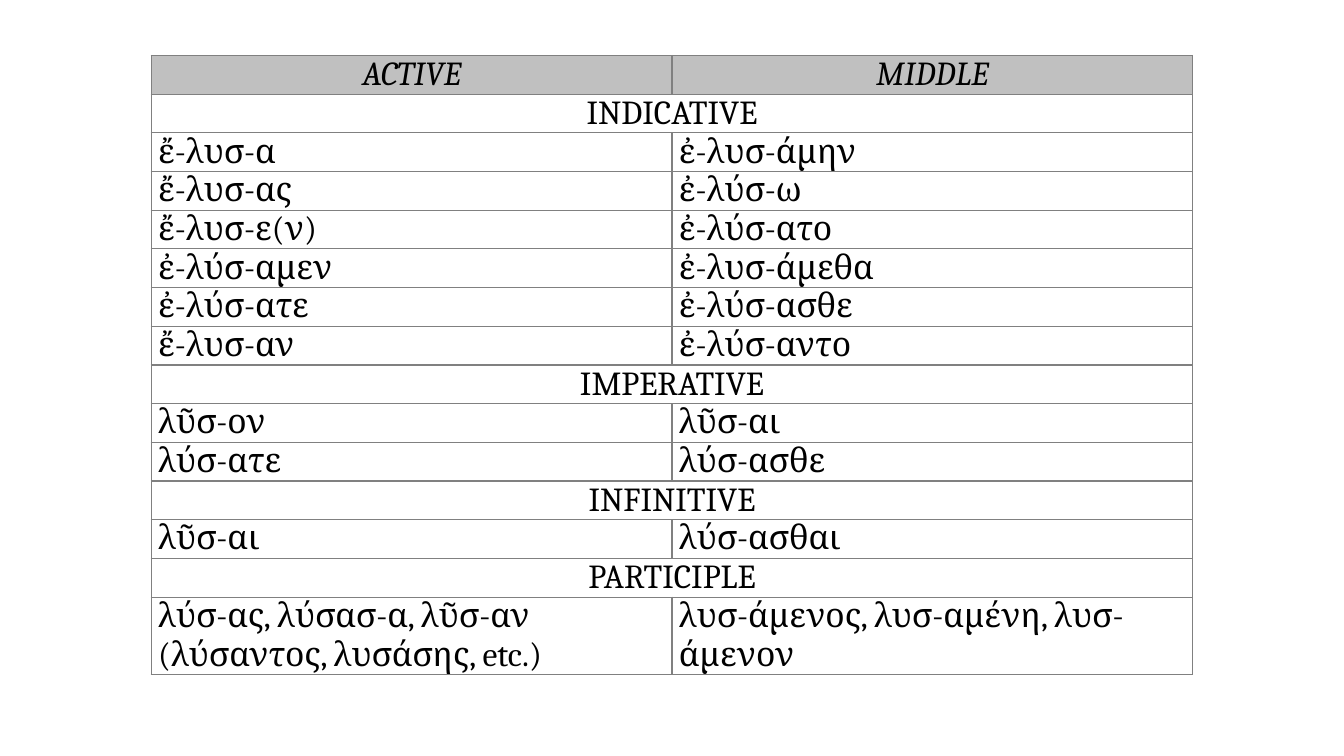
import dataclasses

import pptx
import pptx.dml.color
import pptx.enum.text
import pptx.oxml
import pptx.oxml.ns
import pptx.util

Pt = pptx.util.Pt
RGB = pptx.dml.color.RGBColor


@dataclasses.dataclass(frozen=True)
class Theme:
    """Colours, typeface and sizes of the slide."""
    font: str = "Cambria"
    size: float = 24
    ink: str = "000000"
    header: str = "C0C0C0"
    body: str = "FFFFFF"
    border: str = "808080"
    border_width: float = 1


THEME = Theme()
LEFT, TOP, COLUMN_WIDTH, LINE_HEIGHT = 108, 39.6, 372, 27.6
VOICES = ("ACTIVE", "MIDDLE")
MOODS = {
    "INDICATIVE": [
        ("ἔ-λυσ-α", "ἐ-λυσ-άμην"),
        ("ἔ-λυσ-ας", "ἐ-λύσ-ω"),
        ("ἔ-λυσ-ε(ν)", "ἐ-λύσ-ατο"),
        ("ἐ-λύσ-αμεν", "ἐ-λυσ-άμεθα"),
        ("ἐ-λύσ-ατε", "ἐ-λύσ-ασθε"),
        ("ἔ-λυσ-αν", "ἐ-λύσ-αντο"),
    ],
    "IMPERATIVE": [("λῦσ-ον", "λῦσ-αι"), ("λύσ-ατε", "λύσ-ασθε")],
    "INFINITIVE": [("λῦσ-αι", "λύσ-ασθαι")],
    "PARTICIPLE": [
        ("λύσ-ας, λύσασ-α, λῦσ-αν\v(λύσαντος, λυσάσης, etc.)",
         "λυσ-άμενος, λυσ-αμένη, λυσ-άμενον"),
    ],
}


def apply(target, formats):
    """Set each attribute of target from a dict."""
    for name, value in formats.items():
        setattr(target, name, value)


def add_borders(cell):
    """Draw a thin line on all four sides of a cell."""
    properties = cell._tc.get_or_add_tcPr()
    for side in ("lnL", "lnR", "lnT", "lnB"):
        properties.append(pptx.oxml.parse_xml(
            f'<a:{side} {pptx.oxml.ns.nsdecls("a")} w="{Pt(THEME.border_width)}">'
            f'<a:solidFill><a:srgbClr val="{THEME.border}"/></a:solidFill></a:{side}>'))


def style_cell(cell, fill):
    """Give a cell its borders, margins and fill."""
    add_borders(cell)
    apply(cell, {"margin_left": Pt(5), "margin_right": Pt(5),
                 "margin_top": 0, "margin_bottom": 0})
    cell.fill.solid()
    cell.fill.fore_color.rgb = RGB.from_string(fill)


def write_cell(cell, text, centred=False, italic=False):
    """Write formatted text into a cell."""
    para = cell.text_frame.paragraphs[0]
    para.text = text
    if centred:
        para.alignment = pptx.enum.text.PP_ALIGN.CENTER
    for span in para.runs:
        apply(span.font, {"name": THEME.font, "size": Pt(THEME.size),
                          "bold": False, "italic": italic})
        span.font.color.rgb = RGB.from_string(THEME.ink)


def add_paradigm(page):
    """Add the table of verb forms, with one merged row above each mood."""
    rows = [VOICES]
    for mood, forms in MOODS.items():
        rows += [(mood,), *forms]
    frame = page.shapes.add_table(
        len(rows), len(VOICES), Pt(LEFT), Pt(TOP),
        Pt(COLUMN_WIDTH * len(VOICES)), Pt(LINE_HEIGHT * (len(rows) + 1)))
    table = frame.table
    apply(table, {"first_row": False, "horz_banding": False})
    for index, texts in enumerate(rows):
        is_header, is_mood = index == 0, len(texts) == 1
        lines = 1 + any("\v" in text for text in texts)
        table.rows[index].height = Pt(LINE_HEIGHT * lines)
        for column in range(len(VOICES)):
            style_cell(table.cell(index, column),
                       THEME.header if is_header else THEME.body)
        if is_mood:
            table.cell(index, 0).merge(table.cell(index, len(VOICES) - 1))
        for column, text in enumerate(texts):
            write_cell(table.cell(index, column), text,
                       centred=is_header or is_mood, italic=is_header)


def main():
    """Build the slide and save it."""
    deck = pptx.Presentation()
    apply(deck, {"slide_width": Pt(960), "slide_height": Pt(540)})
    page = deck.slides.add_slide(deck.slide_layouts.get_by_name("Blank"))
    add_paradigm(page)
    deck.save("out.pptx")


if __name__ == "__main__":
    main()
